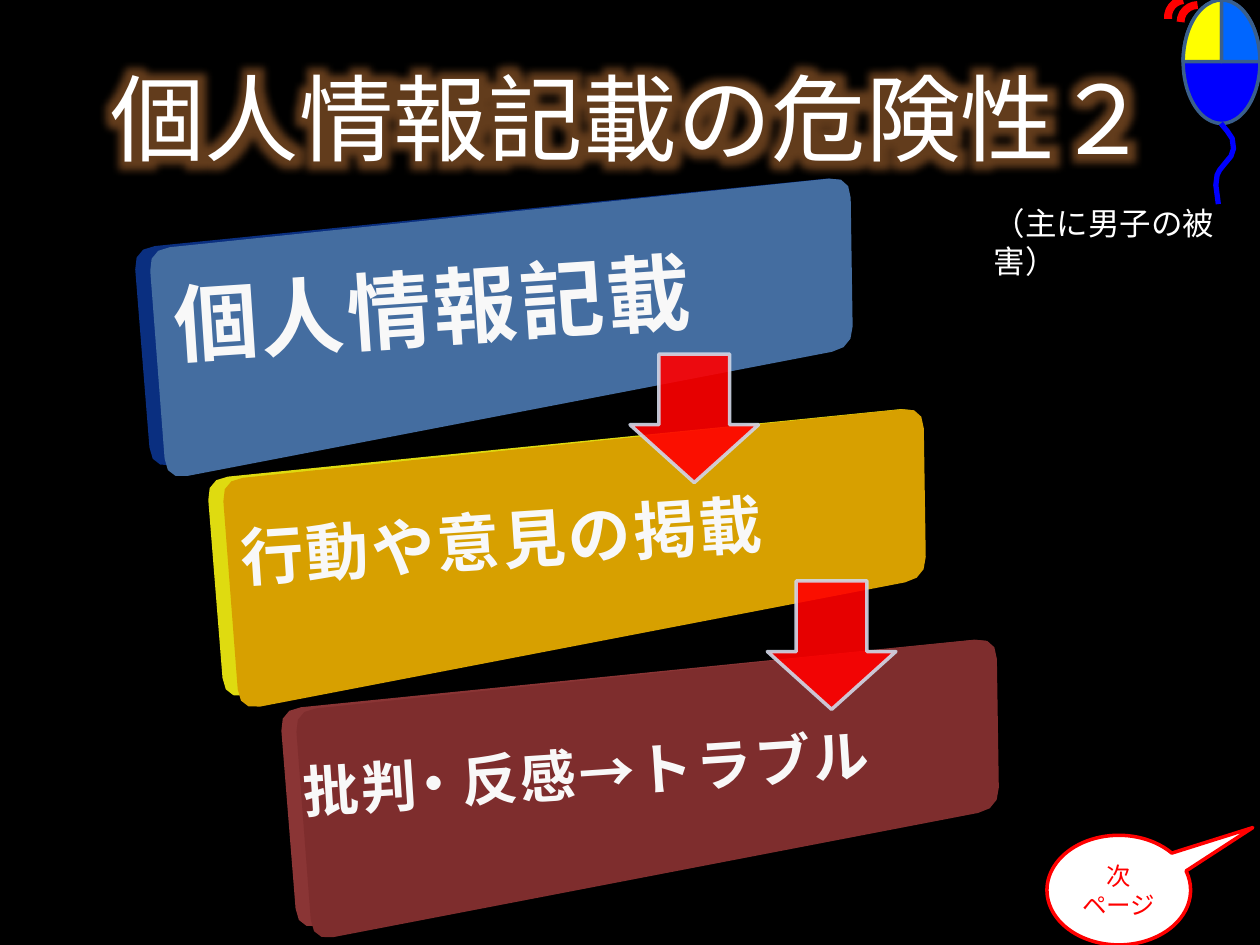
from dataclasses import dataclass
from math import cos, radians, sin

from lxml import etree
from pptx import Presentation
from pptx.dml.color import RGBColor
from pptx.enum.shapes import MSO_SHAPE
from pptx.enum.text import MSO_ANCHOR, PP_ALIGN
from pptx.oxml.ns import qn
from pptx.util import Inches, Pt

ARROW, CALLOUT = MSO_SHAPE.DOWN_ARROW, MSO_SHAPE.OVAL_CALLOUT
ELLIPSE, PIE, ARC = MSO_SHAPE.OVAL, MSO_SHAPE.PIE, MSO_SHAPE.ARC
MIDDLE, CENTER, LEFT = MSO_ANCHOR.MIDDLE, PP_ALIGN.CENTER, PP_ALIGN.LEFT


@dataclass(frozen=True)
class Theme:
    font: str = "Calibri"
    background: str = "000000"
    white: str = "FFFFFF"
    panel_text: str = "F8F8F8"
    glow: str = "F79646"
    red: str = "FF0000"
    arrow_edge: str = "D0D8E8"
    mouse_body: str = "0000FF"
    mouse_left: str = "FFFF00"
    mouse_right: str = "0066FF"
    mouse_edge: str = "3A5F8C"
    title_size: int = 54
    note_size: int = 18
    callout_size: int = 14


THEME = Theme()


def style(shape, fill=None, line=None, width=2, alpha=None):
    shape.shadow.inherit = False
    if fill:
        shape.fill.solid()
        shape.fill.fore_color.rgb = RGBColor.from_string(fill)
    else:
        shape.fill.background()
    if line:
        shape.line.color.rgb = RGBColor.from_string(line)
        shape.line.width = Pt(width)
    else:
        shape.line.fill.background()
    if alpha:
        for color in shape._element.spPr.iter(qn("a:srgbClr")):
            etree.SubElement(color, qn("a:alpha")).set("val", str(alpha * 1000))


def write(shape, parts, size, color, align=CENTER, bold=False, wrap=True):
    """Write the first part as text and any further parts as runs after it."""
    frame = shape.text_frame
    frame.text = parts[0]
    for part in parts[1:]:
        frame.paragraphs[0].add_run().text = part
    frame.word_wrap = wrap
    frame.vertical_anchor = MIDDLE
    for paragraph in frame.paragraphs:
        paragraph.alignment = align
        for run in paragraph.runs:
            run.font.name = THEME.font
            run.font.size = Pt(size)
            run.font.bold = bold
            run.font.color.rgb = RGBColor.from_string(color)


prs = Presentation()
prs.slide_width, prs.slide_height = Inches(10), Inches(7.5)
slide = prs.slides.add_slide(prs.slide_layouts[6])
shapes = slide.shapes
slide.background.fill.solid()
slide.background.fill.fore_color.rgb = RGBColor.from_string(THEME.background)

# Title with an orange glow
title = shapes.add_textbox(Inches(0.5), Inches(0.3), Inches(9), Inches(1.25))
write(title, ["個人情報記載の危険性２"], THEME.title_size, THEME.white)
title_props = title.text_frame.paragraphs[0].runs[0].font._element
effects = etree.Element(qn("a:effectLst"))
title_props.find(qn("a:solidFill")).addnext(effects)
glow = etree.SubElement(effects, qn("a:glow"), rad="228600")
glow_color = etree.SubElement(glow, qn("a:srgbClr"), val=THEME.glow)
etree.SubElement(glow_color, qn("a:alpha"), val="40000")

# Three slabs in perspective; each face is drawn level around its caption, then tilted
SIDE = [(1.06, 1.97), (6.74, 1.4), (6.7, 2.76), (1.2, 3.72)]
FACE = [(1.18, 1.98), (6.75, 1.4), (6.77, 2.76), (1.32, 3.81)]
STEP_X, STEP_Y = 0.58, 1.83
CORNER, CORNER_STEPS = 0.17, 3
TILT = 3.8
COS, SIN = cos(radians(TILT)), sin(radians(TILT))
SPACING, TIGHT_SPACING = "150", "-650"
slabs = [
    (["個人情報記載"], 48, "446DA0", "0A2F80", 3.43, 2.43),
    (["行動や意見の掲載"], 36, "D7A000", "DFDB10", 3.98, 4.28),
    (["批", "判・", "反感→トラブル"], 32, "7E2D2D", "8A3535", 4.65, 6.13),
]
for row, (caption, size, face_color, side_color, mid_x, mid_y) in enumerate(slabs):
    for corners, color in ((SIDE, side_color), (FACE, face_color)):
        outline = []
        for i, (x, y) in enumerate(corners):
            ends = []
            for nx, ny in (corners[i - 1], corners[(i + 1) % 4]):
                share = CORNER / ((nx - x) ** 2 + (ny - y) ** 2) ** 0.5
                ends.append((x + share * (nx - x), y + share * (ny - y)))
            (ax, ay), (bx, by) = ends
            for t in (k / CORNER_STEPS for k in range(CORNER_STEPS + 1)):
                p, q, r = (1 - t) ** 2, 2 * t * (1 - t), t * t
                outline.append((p * ax + q * x + r * bx + row * STEP_X,
                                p * ay + q * y + r * by + row * STEP_Y))
        if corners is FACE:
            offsets = [(x - mid_x, y - mid_y) for x, y in outline]
            outline = [(mid_x + COS * dx - SIN * dy, mid_y + SIN * dx + COS * dy)
                       for dx, dy in offsets]
        points = [(Inches(x), Inches(y)) for x, y in outline]
        builder = shapes.build_freeform(*points[0])
        builder.add_line_segments(points[1:], close=True)
        slab = builder.convert_to_shape()
        style(slab, color)
    dx = slab.left + slab.width / 2 - Inches(mid_x)
    dy = slab.top + slab.height / 2 - Inches(mid_y)
    slab.left += round(COS * dx + SIN * dy - dx)
    slab.top += round(COS * dy - SIN * dx - dy)
    slab.rotation = -TILT
    frame = slab.text_frame
    frame.margin_left = frame.margin_top = 0
    frame.margin_right, frame.margin_bottom = round(2 * dx), round(2 * dy)
    write(slab, caption, size, THEME.panel_text, bold=True)
    for run in frame.paragraphs[0].runs:
        run.font._element.set("spc", TIGHT_SPACING if "・" in run.text else SPACING)

# Arrows from slab to slab
for left, top in ((5, 2.81), (6.09, 4.61)):
    arrow = shapes.add_shape(ARROW, Inches(left), Inches(top), Inches(1.02), Inches(1.02))
    arrow.adjustments[0], arrow.adjustments[1] = 0.55, 0.45
    style(arrow, THEME.red, THEME.arrow_edge, alpha=90)

note = shapes.add_textbox(Inches(7.79), Inches(1.57), Inches(2.21), Inches(0.7))
write(note, ["（主に男子の被害）"], THEME.note_size, THEME.white, LEFT)

next_page = shapes.add_shape(CALLOUT, Inches(8.31), Inches(6.63), Inches(1.14), Inches(0.87))
next_page.adjustments[0], next_page.adjustments[1] = 0.933, -0.571
style(next_page, THEME.white, THEME.red)
write(next_page, ["次\nページ"], THEME.callout_size, THEME.red)

# Computer mouse with its left button clicking
mouse = shapes.add_group_shape().shapes
for preset, color, flipped in ((ELLIPSE, THEME.mouse_body, False),
                               (PIE, THEME.mouse_left, False),
                               (PIE, THEME.mouse_right, True)):
    part = mouse.add_shape(preset, Inches(9.39), 0, Inches(0.61), Inches(0.98))
    style(part, color, THEME.mouse_edge)
    if preset == PIE:
        part.adjustments[0], part.adjustments[1] = 108, 162
    if flipped:
        part._element.spPr.xfrm.set("flipH", "1")

cable_points = [(Inches(x), Inches(y)) for x, y in (
    (9.69, 0.98), (9.74, 1.04), (9.78, 1.1), (9.79, 1.18), (9.77, 1.24),
    (9.72, 1.3), (9.68, 1.35), (9.66, 1.39), (9.65, 1.47), (9.67, 1.62))]
cable = mouse.build_freeform(*cable_points[0])
cable.add_line_segments(cable_points[1:], close=False)
style(cable.convert_to_shape(), line=THEME.mouse_body, width=3)

for left, top, angle in ((9.27, 0, 353.5), (9.37, 0.04, 0)):
    click = mouse.add_shape(ARC, Inches(left), Inches(top), Inches(0.27), Inches(0.27))
    style(click, line=THEME.red, width=4.5)
    click.rotation = angle
    click._element.spPr.xfrm.set("flipH", "1")

prs.save("out.pptx")
